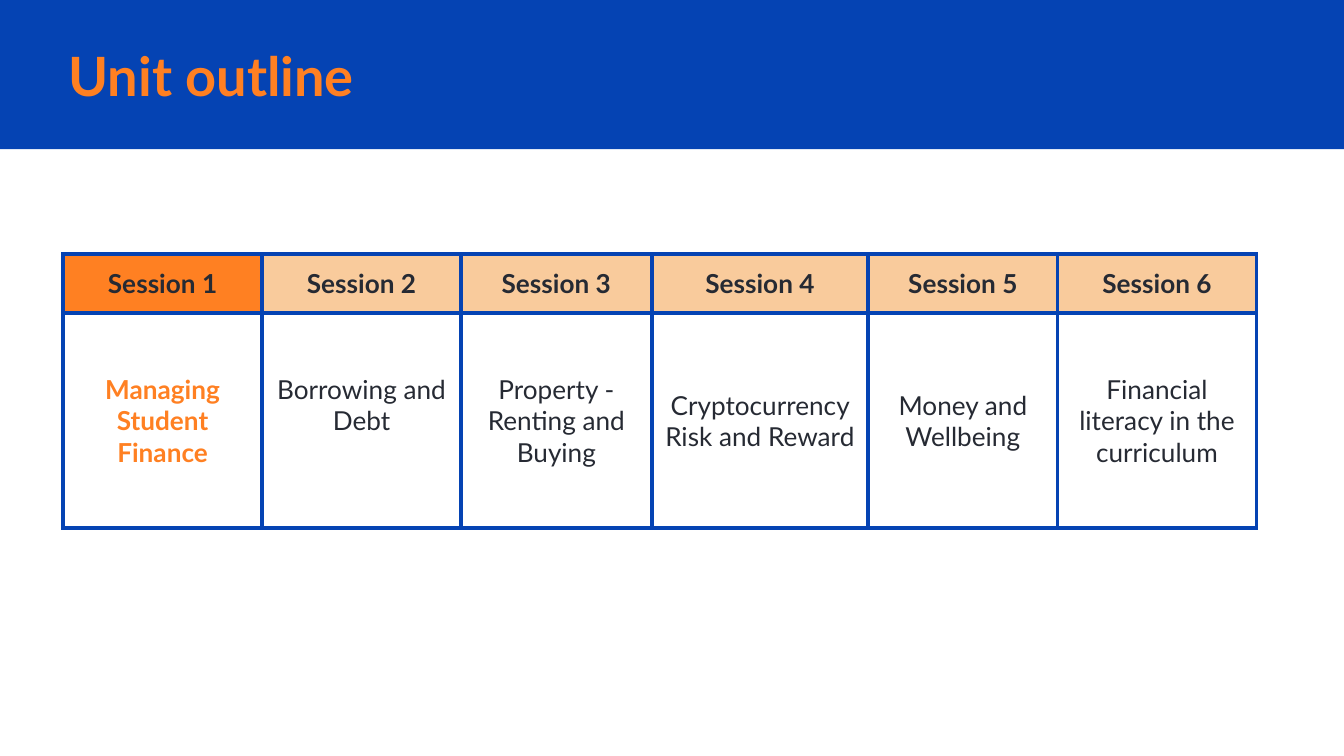
from dataclasses import dataclass

from lxml import etree
from pptx import Presentation
from pptx.dml.color import RGBColor
from pptx.enum import shapes, text
from pptx.oxml import ns
from pptx.util import Inches, Pt

COLORS = {
    "blue": "0543B3",
    "orange": "FF8022",
    "peach": "F9CB9C",
    "ink": "262A33",
    "white": "FFFFFF",
}
FONT = "Lato"
INSET = 0.1
BORDER_POINTS = 2.25
ROW_HEIGHTS = (0.44, 1.6)


@dataclass(frozen=True)
class Session:
    topic: str
    width: float
    current: bool = False
    bottom_inset: float = INSET


SESSIONS = (
    Session("Managing Student Finance", 1.48, current=True),
    Session("Borrowing and Debt", 1.48, bottom_inset=0.33),
    Session("Property - Renting and Buying", 1.42),
    Session("Cryptocurrency Risk and Reward", 1.61),
    Session("Money and Wellbeing", 1.41),
    Session("Financial literacy in the curriculum", 1.48),
)


def rgb(name: str) -> RGBColor:
    return RGBColor.from_string(COLORS[name])


def write_text(frame, content: str, *, size: float, color: str = "ink",
               bold: bool = False, align=text.PP_ALIGN.CENTER) -> None:
    paragraph = frame.paragraphs[0]
    paragraph.alignment = align
    run = paragraph.add_run()
    run.text = content
    run.font.name = FONT
    run.font.size = Pt(size)
    run.font.bold = bold
    run.font.color.rgb = rgb(color)


def set_insets(target, bottom: float = INSET) -> None:
    target.margin_left = target.margin_right = target.margin_top = Inches(INSET)
    target.margin_bottom = Inches(bottom)
    target.vertical_anchor = text.MSO_ANCHOR.MIDDLE


def add_borders(cell) -> None:
    properties = cell._tc.get_or_add_tcPr()
    for index, side in enumerate(("a:lnL", "a:lnR", "a:lnT", "a:lnB")):
        line = etree.Element(ns.qn(side), w=str(Pt(BORDER_POINTS)))
        fill = etree.SubElement(line, ns.qn("a:solidFill"))
        etree.SubElement(fill, ns.qn("a:srgbClr"), val=COLORS["blue"])
        properties.insert(index, line)


def format_cell(cell, content: str, *, fill: str, bottom: float = INSET,
                color: str = "ink", bold: bool = False) -> None:
    cell.fill.solid()
    cell.fill.fore_color.rgb = rgb(fill)
    set_insets(cell, bottom)
    add_borders(cell)
    write_text(cell.text_frame, content, size=14, color=color, bold=bold)


def add_header(slide, width: int) -> None:
    band = slide.shapes.add_shape(
        shapes.MSO_SHAPE.RECTANGLE, 0, 0, width, Inches(1.11))
    band.shadow.inherit = False
    band.fill.solid()
    band.fill.fore_color.rgb = rgb("blue")
    band.line.fill.background()

    title = slide.shapes.title
    title.left, title.top = Inches(0.41), Inches(0.28)
    title.width, title.height = Inches(8.46), Inches(0.56)
    title._element.addprevious(band._element)
    title.text_frame.word_wrap = True
    title.text_frame.auto_size = text.MSO_AUTO_SIZE.NONE
    set_insets(title.text_frame)
    write_text(title.text_frame, "Unit outline", size=29, color="orange",
               bold=True, align=text.PP_ALIGN.LEFT)


def add_session_table(slide, sessions: tuple[Session, ...]) -> None:
    table = slide.shapes.add_table(
        len(ROW_HEIGHTS), len(sessions), Inches(0.47), Inches(1.89),
        Inches(sum(session.width for session in sessions)),
        Inches(sum(ROW_HEIGHTS))).table
    table.first_row = table.horz_banding = False
    for row, height in zip(table.rows, ROW_HEIGHTS):
        row.height = Inches(height)
    for column, session in enumerate(sessions):
        table.columns[column].width = Inches(session.width)
        format_cell(table.cell(0, column), f"Session {column + 1}", bold=True,
                    fill="orange" if session.current else "peach")
        format_cell(table.cell(1, column), session.topic, fill="white",
                    bottom=session.bottom_inset, bold=session.current,
                    color="orange" if session.current else "ink")


def main() -> None:
    presentation = Presentation()
    presentation.slide_width = Inches(10)
    presentation.slide_height = presentation.slide_width * 9 // 16
    slide = presentation.slides.add_slide(presentation.slide_layouts[5])
    add_header(slide, presentation.slide_width)
    add_session_table(slide, SESSIONS)
    presentation.save("out.pptx")


if __name__ == "__main__":
    main()
